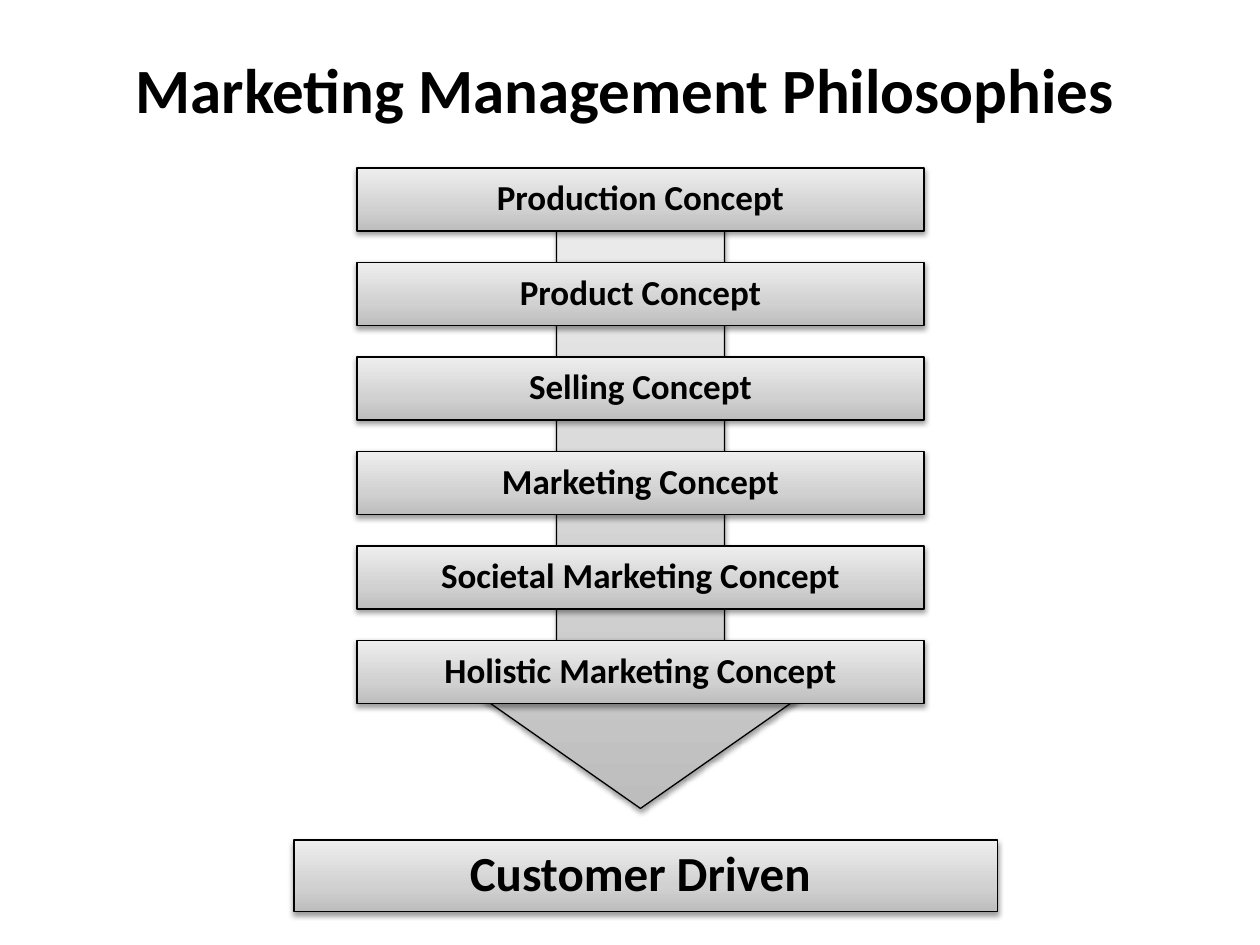
from lxml import etree
from pptx import Presentation
from pptx.dml.color import RGBColor
from pptx.enum.shapes import MSO_SHAPE
from pptx.enum.text import MSO_ANCHOR, PP_ALIGN
from pptx.oxml.ns import qn
from pptx.util import Pt

RECT, ARROW = MSO_SHAPE.RECTANGLE, MSO_SHAPE.DOWN_ARROW
CENTER, MIDDLE = PP_ALIGN.CENTER, MSO_ANCHOR.MIDDLE
TITLE_ONLY = 5
CONCEPTS = ["Production", "Product", "Selling", "Marketing",
            "Societal Marketing", "Holistic Marketing"]


def rgb(value):
    return RGBColor.from_string(value)


def add(parent, tag, **attrs):
    return etree.SubElement(parent, qn(tag), {k: str(v) for k, v in attrs.items()})


def write(tf, text, size=20, font="Calibri", color="000000", bold=True, spacing=None):
    tf.vertical_anchor = MIDDLE
    p = tf.paragraphs[0]
    p.alignment = CENTER
    p.line_spacing = spacing
    r = p.add_run()
    r.text = text
    r.font.size, r.font.name, r.font.bold = Pt(size), font, bold
    r.font.color.rgb = rgb(color)


class Deck:
    """Holds the grey style and the current slide."""

    stops = [(0, "BDBDBD"), (35, "D1D1D1"), (100, "EEEEEE")]
    ink = "000000"

    def __init__(self, width, height):
        self.prs = Presentation()
        self.prs.slide_width, self.prs.slide_height = Pt(width), Pt(height)
        self.s = self.prs.slides.add_slide(self.prs.slide_layouts[TITLE_ONLY])

    def title(self, text, x, y, w, h):
        sp = self.s.shapes.title
        sp.left, sp.top, sp.width, sp.height = Pt(x), Pt(y), Pt(w), Pt(h)
        write(sp.text_frame, text, size=36, color=self.ink)

    def shape(self, kind, x, y, w, h):
        sp = self.s.shapes.add_shape(kind, Pt(x), Pt(y), Pt(w), Pt(h))
        sp.line.color.rgb = rgb(self.ink)
        sp.line.width = Pt(0.75)
        self.gradient(sp)
        self.shadow(sp)
        return sp

    def gradient(self, sp):
        sp.fill.gradient()
        sp.fill.gradient_angle = 90
        gs_list = sp.element.spPr.find(".//" + qn("a:gsLst"))
        for gs in list(gs_list):
            gs_list.remove(gs)
        for pos, color in self.stops:
            add(add(gs_list, "a:gs", pos=pos * 1000), "a:srgbClr", val=color)

    def shadow(self, sp):
        sp.shadow.inherit = False
        effects = sp.element.spPr.find(qn("a:effectLst"))
        outer = add(effects, "a:outerShdw", blurRad=Pt(3.15), dist=Pt(1.57),
                    dir=90 * 60000, rotWithShape=0)
        add(add(outer, "a:srgbClr", val=self.ink), "a:alpha", val=38000)

    def arrow(self, x, y, w, h, shaft=0.5, head=0.35):
        sp = self.shape(ARROW, x, y, w, h)
        sp.adjustments[0], sp.adjustments[1] = shaft, head

    def box(self, text, x, y, w, h, size=20):
        tf = self.shape(RECT, x, y, w, h).text_frame
        tf.word_wrap = False
        tf.margin_left = tf.margin_right = Pt(6.5)
        tf.margin_top = tf.margin_bottom = Pt(3)
        write(tf, text, size=size, color=self.ink, spacing=0.9)


def main():
    deck = Deck(720, 540)
    deck.title("Marketing Management Philosophies", 24, 24, 666, 52.5)
    deck.arrow(270, 102, 192, 360)
    for i, name in enumerate(CONCEPTS):
        deck.box(f"{name} Concept", 204, 96 + 54 * i, 324, 36)
    deck.box("Customer Driven ", 168, 480, 402, 41, size=28)
    deck.prs.save("out.pptx")


if __name__ == "__main__":
    main()
